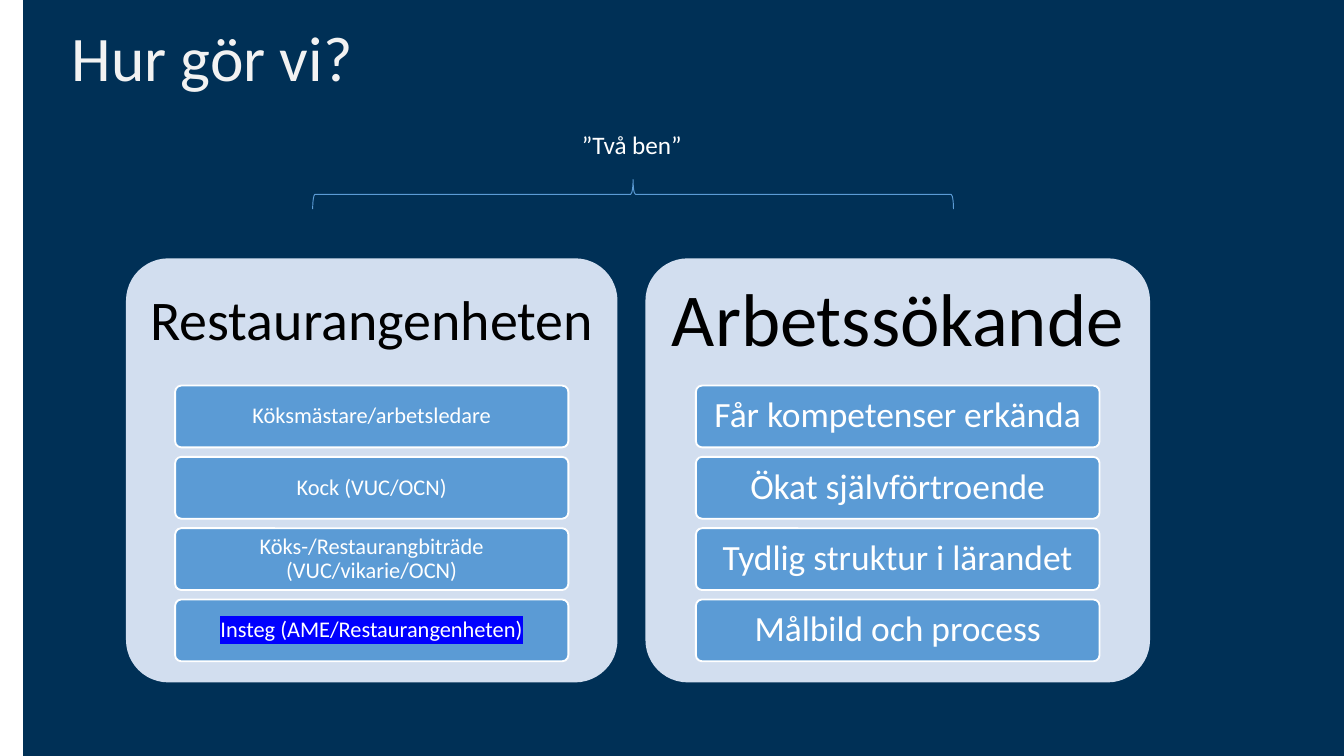
from dataclasses import dataclass
from typing import Any

from lxml import etree
from pptx import Presentation
from pptx import util as u
from pptx.dml.color import RGBColor
from pptx.enum import shapes, text
from pptx.oxml.ns import qn

COLORS = {
    "navy": "003056",
    "title": "F2F2F2",
    "card": "D2DEEF",
    "blue": "5B9BD5",
    "white": "FFFFFF",
    "black": "000000",
    "highlight": "0000FF",
}


@dataclass
class SlideBuilder:
    """Hold the style and the current slide, and draw each kind of element."""

    slide: Any
    font: str = "Calibri"
    corner: float = 0.1
    item_top: float = 206.6
    item_height: float = 33.1
    item_pitch: float = 38.2

    def shape(self, kind, left, top, width, height, fill=None, line=None, weight=1):
        shape = self.slide.shapes.add_shape(
            kind, u.Pt(left), u.Pt(top), u.Pt(width), u.Pt(height))
        shape.shadow.inherit = False
        if fill:
            shape.fill.solid()
            shape.fill.fore_color.rgb = RGBColor.from_string(COLORS[fill])
        else:
            shape.fill.background()
        if line:
            shape.line.color.rgb = RGBColor.from_string(COLORS[line])
            shape.line.width = u.Pt(weight)
        else:
            shape.line.fill.background()
        return shape

    def rounded(self, left, top, width, height, fill, line=None):
        shape = self.shape(shapes.MSO_SHAPE.ROUNDED_RECTANGLE,
                           left, top, width, height, fill, line)
        shape.adjustments[0] = self.corner
        return shape

    def add_words(self, shape, words, size, color, inset=(0, 0), align=text.PP_ALIGN.CENTER,
                  anchor=text.MSO_ANCHOR.MIDDLE, spacing=0.9, highlight=None):
        frame = shape.text_frame
        frame.word_wrap = True
        frame.vertical_anchor = anchor
        frame.margin_left = frame.margin_right = u.Pt(inset[0])
        frame.margin_top = frame.margin_bottom = u.Pt(inset[1])
        paragraph = frame.paragraphs[0]
        paragraph.alignment = align
        paragraph.line_spacing = spacing
        run = paragraph.add_run()
        run.text = words
        run.font.size = u.Pt(size)
        run.font.name = self.font
        run.font.color.rgb = RGBColor.from_string(COLORS[color])
        if highlight:
            mark = etree.Element(qn("a:highlight"))
            etree.SubElement(mark, qn("a:srgbClr"), val=COLORS[highlight])
            run.font._element.find(qn("a:solidFill")).addnext(mark)

    def label(self, left, top, width, height, words, size, color, **style):
        box = self.slide.shapes.add_textbox(
            u.Pt(left), u.Pt(top), u.Pt(width), u.Pt(height))
        self.add_words(box, words, size, color, **style)

    def brace(self, left, top, width, height):
        center_x, center_y = left + width / 2, top + height / 2
        brace = self.shape(shapes.MSO_SHAPE.RIGHT_BRACE, center_x - height / 2,
                           center_y - width / 2, height, width, line="blue", weight=0.5)
        brace.adjustments[0] = 0.08
        brace.adjustments[1] = 0.5
        brace.rotation = 270

    def card(self, left, width, heading, heading_size, heading_inset,
             items, item_size, item_inset, highlighted=None):
        self.rounded(left, 138.4, width, 227.2, "card")
        self.label(left, 138.4, width, 68.2, heading, heading_size, "black",
                   inset=(heading_inset, heading_inset))
        for index, item in enumerate(items):
            shape = self.rounded(left + width * 0.1, self.item_top + index * self.item_pitch,
                                 width * 0.8, self.item_height, "blue", "white")
            self.add_words(shape, item, item_size, "white", inset=item_inset,
                           highlight="highlight" if item == highlighted else None)


def main():
    presentation = Presentation()
    presentation.slide_width, presentation.slide_height = u.Pt(720), u.Pt(405)
    builder = SlideBuilder(presentation.slides.add_slide(presentation.slide_layouts[6]))

    builder.shape(shapes.MSO_SHAPE.RECTANGLE, 12.4, 0, 707.6, 405, "navy")
    builder.label(38.4, 14.4, 657.4, 48.2, "Hur gör vi?", 34, "title",
                  align=text.PP_ALIGN.LEFT, anchor=text.MSO_ANCHOR.TOP)
    entry = "Insteg (AME/Restaurangenheten)"
    builder.card(67.5, 263.3, "Restaurangenheten", 30, 8.6,
                 ["Köksmästare/arbetsledare", "Kock (VUC/OCN)",
                  "Köks-/Restaurangbiträde (VUC/vikarie/OCN)", entry],
                 12, (2.4, 2), highlighted=entry)
    builder.card(345.8, 270.3, "Arbetssökande", 40, 12,
                 ["Får kompetenser erkända", "Ökat självförtroende",
                  "Tydlig struktur i lärandet", "Målbild och process"],
                 19, (3.6, 2.9))
    builder.brace(167.5, 96.2, 343.3, 15.8)
    builder.label(263.5, 65.5, 149.8, 23.8, "”Två ben”", 13.5, "white",
                  inset=(7.2, 3.6), anchor=text.MSO_ANCHOR.TOP, spacing=1.0)

    presentation.save("out.pptx")


if __name__ == "__main__":
    main()
